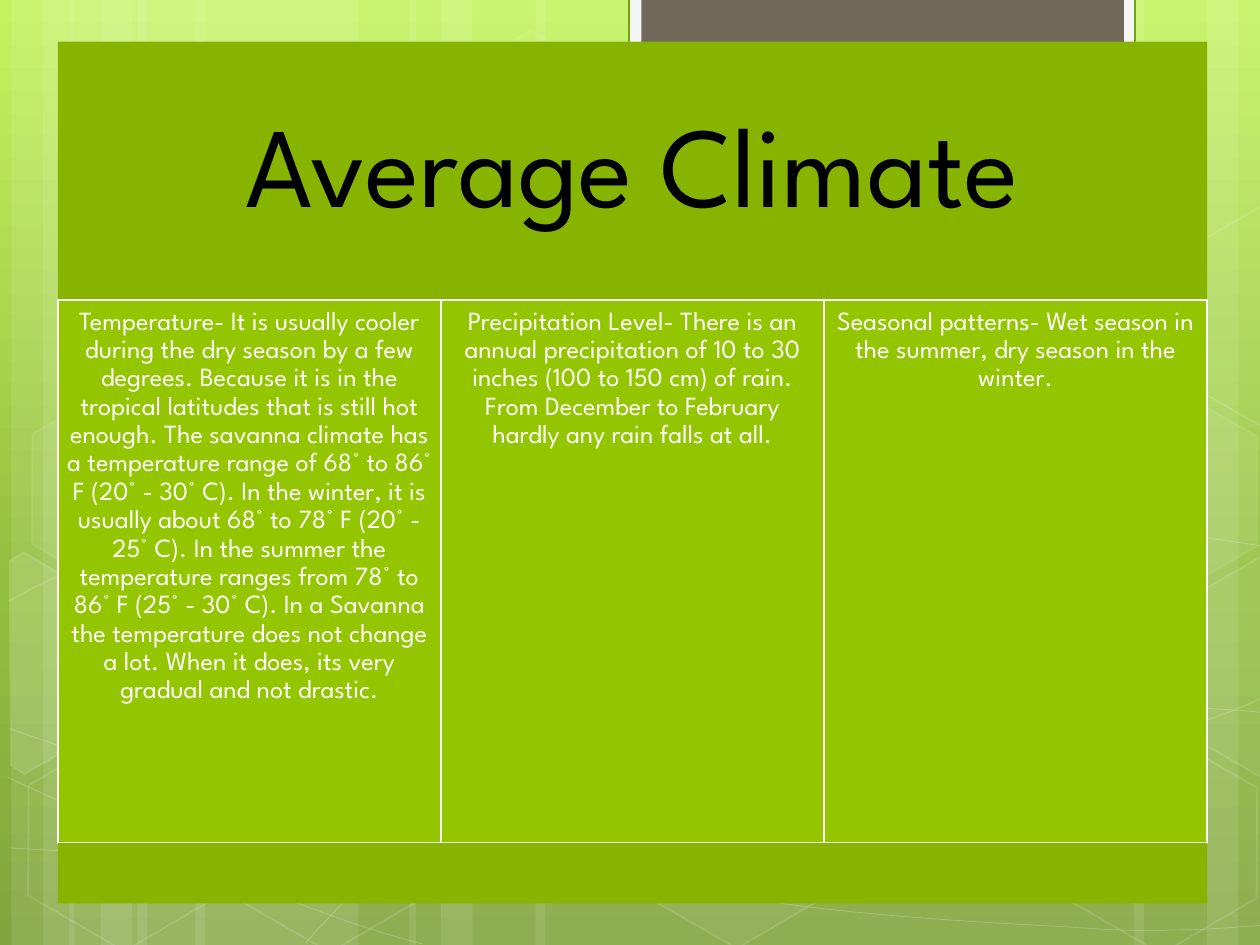
from copy import deepcopy
from math import cos, radians, sin
from lxml.etree import SubElement
from pptx import Presentation
from pptx.dml.color import RGBColor
from pptx.enum.shapes import MSO_SHAPE
from pptx.enum.text import MSO_ANCHOR, PP_ALIGN
from pptx.oxml.ns import qn
from pptx.util import Inches, Pt

FONT = "League Spartan"
TILT = 30
HEX = {"white": "FFFFFF", "black": "000000", "pale": "F5F5F5", "edge": "74A510",
       "brown": "71685A", "band": "86B400", "cell": "94C600"}
SKY = [(0, "C3F35F"), (0.62, "93BF3F"), (1, "81A53E")]
TITLE = "Average Climate"
NOTES = [
    "Temperature- It is usually cooler during the dry season by a few degrees. "
    "Because it is in the tropical latitudes that is still hot enough. "
    "The savanna climate has a temperature range of 68° to 86° F (20° - 30° C). "
    "In the winter, it is usually about 68° to 78° F (20° - 25° C). "
    "In the summer the temperature ranges from 78° to 86° F (25° - 30° C). "
    "In a Savanna the temperature does not change a lot. "
    "When it does, its very gradual and not drastic.",
    "Precipitation Level- There is an annual precipitation of 10 to 30 inches "
    "(100 to 150 cm) of rain. From December to February hardly any rain falls at all.",
    "Seasonal patterns- Wet season in the summer, dry season in the winter.",
]
BEAMS = [(0.09, 1.75, 1), (0.55, 1.75, 1), (10.08, 1.75, -1), (3.25, 3.08, 1)]
WAVES = [
    ("CCCC", [
        (0.07, 6.73), (0.61, 6.76), (1.15, 6.79), (1.9, 6.78), (2.65, 6.77), (3.58, 6.75),
        (4.58, 6.65), (5.58, 6.55), (7, 6.36), (7.92, 6.17), (8.83, 5.98), (9.77, 5.68),
        (10.07, 5.51)]),
    ("CCCC", [
        (0.07, 4.77), (0.36, 4.61), (0.65, 4.46), (1.21, 4.31), (1.78, 4.16), (2.59, 3.94),
        (3.47, 3.87), (4.36, 3.8), (5.44, 3.79), (6.54, 3.87), (7.64, 3.95), (9.47, 4.26),
        (10.07, 4.34)]),
    ("C", [(0.06, 6.17), (1.27, 6.72), (2.47, 7.27), (3.35, 7.49)]),
    ("CCCCCC", [
        (0.07, 5.78), (0.38, 5.89), (0.7, 6), (1.28, 6.16), (1.86, 6.31), (2.73, 6.56),
        (3.57, 6.73), (4.4, 6.9), (5.45, 7.08), (6.28, 7.18), (7.11, 7.29), (8, 7.33),
        (8.53, 7.36), (9.06, 7.4), (9.19, 7.38), (9.45, 7.38), (9.71, 7.37), (9.89, 7.35),
        (10.07, 7.34)]),
    ("CCCCCCCLCC", [
        (2.42, 7.49), (2.6, 7.29), (2.78, 7.09), (3.02, 6.91), (3.26, 6.72), (3.6, 6.53),
        (3.88, 6.39), (4.16, 6.25), (4.33, 6.19), (4.69, 6.09), (5.06, 5.99), (5.73, 5.85),
        (6.08, 5.78), (6.44, 5.71), (6.49, 5.71), (6.8, 5.69), (7.11, 5.66), (7.6, 5.63),
        (7.94, 5.62), (8.29, 5.61), (8.86, 5.62), (8.86, 5.62), (9.53, 5.62), (9.71, 5.63),
        (9.88, 5.64), (9.97, 5.65), (10.06, 5.66), (10.03, 5.65), (10.06, 5.66)]),
]
CELLS = [(3.34, 0.36, 4, 8), (4.97, 5.89, 6, 12), (0.11, 5.91, 0, 12), (0.14, 3.12, 7, 8),
         (1.74, 5.92, 0, 12), (8.34, 5.93, 0, 12), (8.34, 3.14, 7, 8)]
PARTS = [
    ((0.36, 5.36), 10, [(0.08, 4.45), (0.19, 4.38), (0.96, 4.83), (0.95, 5.7),
                        (0.2, 6.14), (0.09, 6.07)]),
    ((9.85, 5.2), 4, [(9.26, 4.85), (10.02, 4.41), (10.09, 4.46), (10.09, 6.13),
                      (10.02, 6.17), (9.26, 5.73)]),
    ((9.85, 2.41), 0, [(9.26, 2.07), (10.02, 1.63), (10.1, 1.68), (10.09, 3.35),
                       (10.02, 3.39), (9.26, 2.95)]),
]

deck = Presentation()
deck.slide_width, deck.slide_height = Inches(10), Inches(7.5)
slide = deck.slides.add_slide(deck.slide_layouts[6])


def tint(fill, host, color, alpha):
    if not color or not alpha:
        fill.background()
        return
    fill.solid()
    fill.fore_color.rgb = RGBColor.from_string(HEX[color])
    if alpha < 100:
        node = host.find(qn("a:solidFill")).find(qn("a:srgbClr"))
        SubElement(node, qn("a:alpha"), val=str(alpha * 1000))


def paint(shape, fill=None, alpha=100, line=None, width=1, fade=100):
    shape.shadow.inherit = False
    tint(shape.fill, shape._element.spPr, fill, alpha)
    if line:
        shape.line.width = Pt(width)
    tint(shape.line.fill, shape.line._get_or_add_ln(), line, fade)
    return shape


def block(x, y, w, h, kind=MSO_SHAPE.RECTANGLE, **look):
    shape = slide.shapes.add_shape(kind, Inches(x), Inches(y), Inches(w), Inches(h))
    return paint(shape, **look)


def trace(points, close=False, **look):
    spots = [(Inches(x), Inches(y)) for x, y in points]
    pen = slide.shapes.build_freeform(*spots[0])
    pen.add_line_segments(spots[1:], close=close)
    return paint(pen.convert_to_shape(), **look)


def bend(shape, kinds):
    route = shape._element.find(".//" + qn("a:path"))
    legs = iter(route.findall(qn("a:lnTo")))
    for kind in kinds:
        if kind == "L":
            route.append(next(legs))
            continue
        curve = SubElement(route, qn("a:cubicBezTo"))
        for _ in range(3):
            leg = next(legs)
            curve.append(leg[0])
            route.remove(leg)


def turn(points, hub):
    c, s = cos(radians(TILT)), sin(radians(TILT))
    x, y = hub
    return [(x + (a - x) * c + (b - y) * s, y - (a - x) * s + (b - y) * c)
            for a, b in points]


def write(text, shape, size, color, inset, anchor):
    frame = shape.text_frame
    frame.word_wrap = True
    frame.vertical_anchor = anchor
    frame.margin_left = frame.margin_right = Inches(inset)
    frame.margin_top = frame.margin_bottom = Inches(inset)
    para = frame.paragraphs[0]
    para.alignment = PP_ALIGN.CENTER
    para.line_spacing = 0.9
    run = para.add_run()
    run.text = text
    run.font.name, run.font.size = FONT, Pt(size)
    run.font.color.rgb = RGBColor.from_string(HEX[color])


def sky():
    fill = slide.background.fill
    fill.gradient()
    fill.gradient_angle = 270
    stops = slide._element.find(".//" + qn("a:gsLst"))
    stops.append(deepcopy(stops[-1]))
    for stop, (place, color) in zip(fill.gradient_stops, SKY):
        stop.position = place
        stop.color.rgb = RGBColor.from_string(color)


def scene():
    for base, wide, way in BEAMS:
        for shift, w in [(1, wide), (0, 0.5), (0.25, 0.83)]:
            x = base + shift if way > 0 else base - shift - w
            block(x, 0, w, 7.5, fill="white", alpha=10)
    for kinds, knots in WAVES:
        bend(trace(knots, line="white", width=0.5, fade=20), kinds)
    for x, y, alpha, fade in CELLS:
        cell = block(x, y, 1.75, 1.52, MSO_SHAPE.HEXAGON,
                     fill="white", alpha=alpha, line="white", fade=fade)
        cell.adjustments[0], cell.adjustments[1] = 0.285, 1.155
        cell.rotation = TILT
    for hub, alpha, points in PARTS:
        part = trace(turn(points, hub), True,
                     fill="white", alpha=alpha, line="white", fade=12)
        part.rotation = TILT
    block(4.99, -0.02, 4.02, 0.77, fill="pale", line="edge", width=1.25)
    block(5.09, -0.02, 3.83, 0.68, fill="brown")


def board():
    left, top, wide, tall = 0.46, 2.38, 3.04, 4.31
    span = wide * len(NOTES)
    head = block(left, 0.33, span, 2.05, fill="band")
    write(TITLE, head, 65, "black", 0.27, MSO_ANCHOR.MIDDLE)
    for i, note in enumerate(NOTES):
        card = block(left + i * wide, top, wide, tall, fill="cell", line="white", width=1.25)
        write(note, card, 15, "white", 0.06, MSO_ANCHOR.TOP)
    block(left, top + tall, span, 0.48, fill="band")


sky()
scene()
board()
deck.save("out.pptx")
